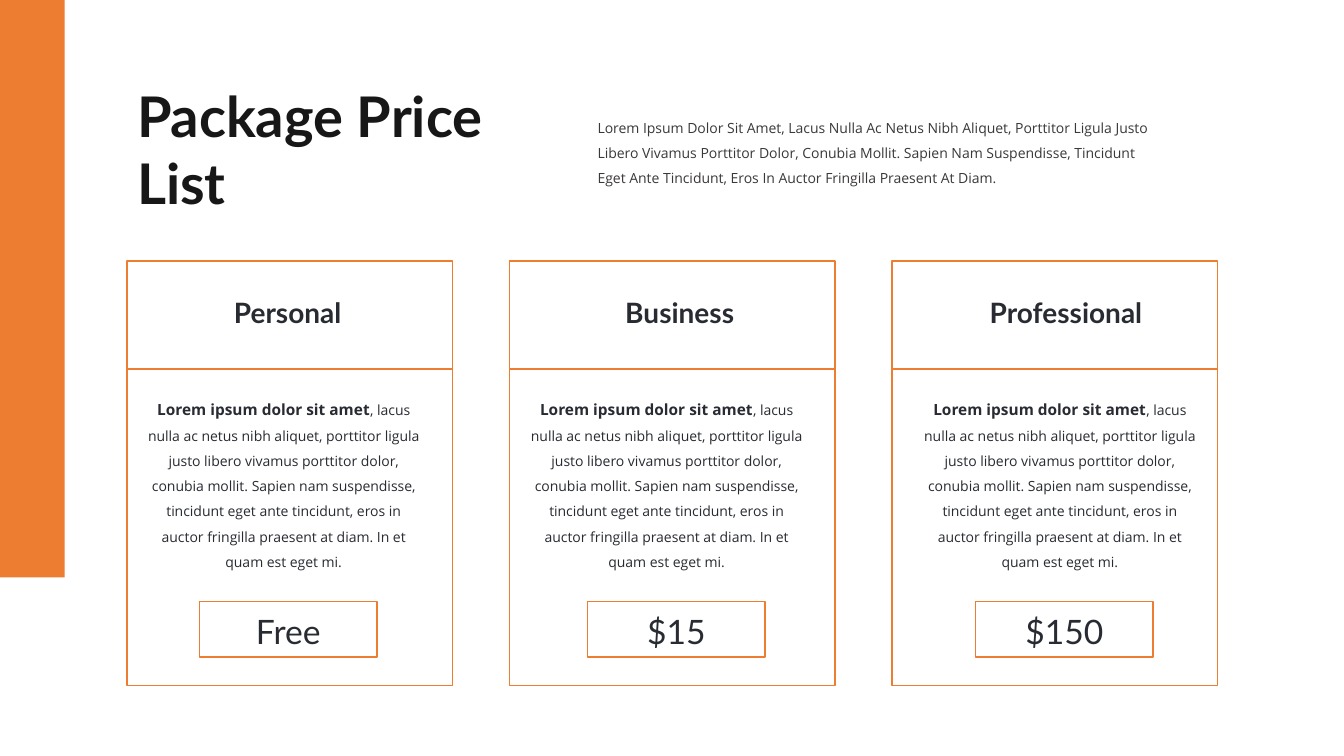
from pptx import Presentation
from pptx.dml.color import RGBColor
from pptx.enum.shapes import MSO_SHAPE
from pptx.enum.text import MSO_ANCHOR, PP_ALIGN
from pptx.util import Cm, Pt

ORANGE = RGBColor(0xED, 0x7D, 0x31)
INK = RGBColor(0x28, 0x2B, 0x31)
TITLE_INK = RGBColor(0x18, 0x17, 0x17)
INTRO_INK = RGBColor(0x3B, 0x38, 0x38)

TITLE = "Package Price List"
INTRO = (
    "Lorem Ipsum Dolor Sit Amet, Lacus Nulla Ac Netus Nibh Aliquet, Porttitor Ligula "
    "Justo Libero Vivamus Porttitor Dolor, Conubia Mollit. Sapien Nam Suspendisse, "
    "Tincidunt Eget Ante Tincidunt, Eros In Auctor Fringilla Praesent At Diam."
)
LEAD = "Lorem ipsum dolor sit amet"
DETAILS = (
    ", lacus nulla ac netus nibh aliquet, porttitor ligula justo libero vivamus "
    "porttitor dolor, conubia mollit. Sapien nam suspendisse, tincidunt eget ante "
    "tincidunt, eros in auctor fringilla praesent at diam. In et quam est eget mi."
)
# Name, price, name left, name width, details left (cm)
PACKAGES = [
    ("Personal", "Free", 5.28, 3.94, 3.38),
    ("Business", "$15", 15.24, 3.78, 13.03),
    ("Professional", "$150", 24.31, 5.11, 22.94),
]

CARD_LEFT, CARD_PITCH, CARD_WIDTH = 3.2, 9.64, 8.2
HEADER_TOP, HEADER_HEIGHT = 6.58, 2.73
BODY_TOP, BODY_HEIGHT = 9.3, 7.98
PRICE_LEFT, PRICE_PITCH, PRICE_WIDTH = 5.03, 9.78, 4.47
PRICE_TOP, PRICE_HEIGHT = 15.16, 1.4
PRICE_INSET = 0.56


def add_rectangle(slide, left, top, width, height, filled=False):
    """Add an orange rectangle, either solid or outlined."""
    shape = slide.shapes.add_shape(
        MSO_SHAPE.RECTANGLE, Cm(left), Cm(top), Cm(width), Cm(height))
    shape.shadow.inherit = False
    if filled:
        shape.fill.solid()
        shape.fill.fore_color.rgb = ORANGE
        shape.line.fill.background()
    else:
        shape.fill.background()
        shape.line.color.rgb = ORANGE
        shape.line.width = Pt(1)


def style_font(font, name, size, color, bold=False):
    font.name = name
    font.size = Pt(size)
    font.color.rgb = color
    font.bold = bold


def add_paragraph_box(slide, left, top, width, height, spacing, align):
    """Add a wrapping text box and return its paragraph."""
    box = slide.shapes.add_textbox(Cm(left), Cm(top), Cm(width), Cm(height))
    box.text_frame.word_wrap = True
    paragraph = box.text_frame.paragraphs[0]
    paragraph.line_spacing = spacing
    paragraph.alignment = align
    return paragraph


def add_label(slide, text, left, top, width, size, bold=False):
    paragraph = add_paragraph_box(
        slide, left, top, width, 1.02, 0.9, PP_ALIGN.CENTER)
    paragraph.text = text
    style_font(paragraph.font, "Lato", size, INK, bold)


def add_title(slide):
    title = slide.shapes.title
    title.left, title.top = Cm(3.2), Cm(1.93)
    title.width, title.height = Cm(10.06), Cm(3.68)
    title.text_frame.text = TITLE
    title.text_frame.word_wrap = True
    title.text_frame.vertical_anchor = MSO_ANCHOR.TOP
    paragraph = title.text_frame.paragraphs[0]
    paragraph.alignment = PP_ALIGN.LEFT
    style_font(paragraph.font, "Lato", 40, TITLE_INK, True)


def add_package(slide, index, name, price, name_left, name_width, details_left):
    card_left = CARD_LEFT + index * CARD_PITCH
    add_rectangle(slide, card_left, BODY_TOP, CARD_WIDTH, BODY_HEIGHT)
    add_rectangle(slide, card_left, HEADER_TOP, CARD_WIDTH, HEADER_HEIGHT)
    add_label(slide, name, name_left, 7.42, name_width, 20, True)

    price_left = PRICE_LEFT + index * PRICE_PITCH
    add_rectangle(slide, price_left, PRICE_TOP, PRICE_WIDTH, PRICE_HEIGHT)
    add_label(slide, price, price_left + PRICE_INSET, 15.39,
              PRICE_WIDTH - 2 * PRICE_INSET, 24)

    details = add_paragraph_box(
        slide, details_left, 9.73, 7.54, 4.8, 1.5, PP_ALIGN.CENTER)
    for text, size, bold in ((LEAD, 11, True), (DETAILS, 10, False)):
        run = details.add_run()
        run.text = text
        style_font(run.font, "Open Sans", size, INK, bold)


def main():
    presentation = Presentation()
    presentation.slide_width, presentation.slide_height = Cm(33.87), Cm(19.05)
    slide = presentation.slides.add_slide(presentation.slide_layouts[5])

    add_title(slide)
    intro = add_paragraph_box(slide, 14.81, 2.67, 14.6, 2.18, 1.5, PP_ALIGN.LEFT)
    intro.text = INTRO
    style_font(intro.font, "Open Sans", 10, INTRO_INK)
    for index, package in enumerate(PACKAGES):
        add_package(slide, index, *package)
    add_rectangle(slide, 0, 0, 1.63, 14.55, filled=True)

    presentation.save("out.pptx")


if __name__ == "__main__":
    main()
